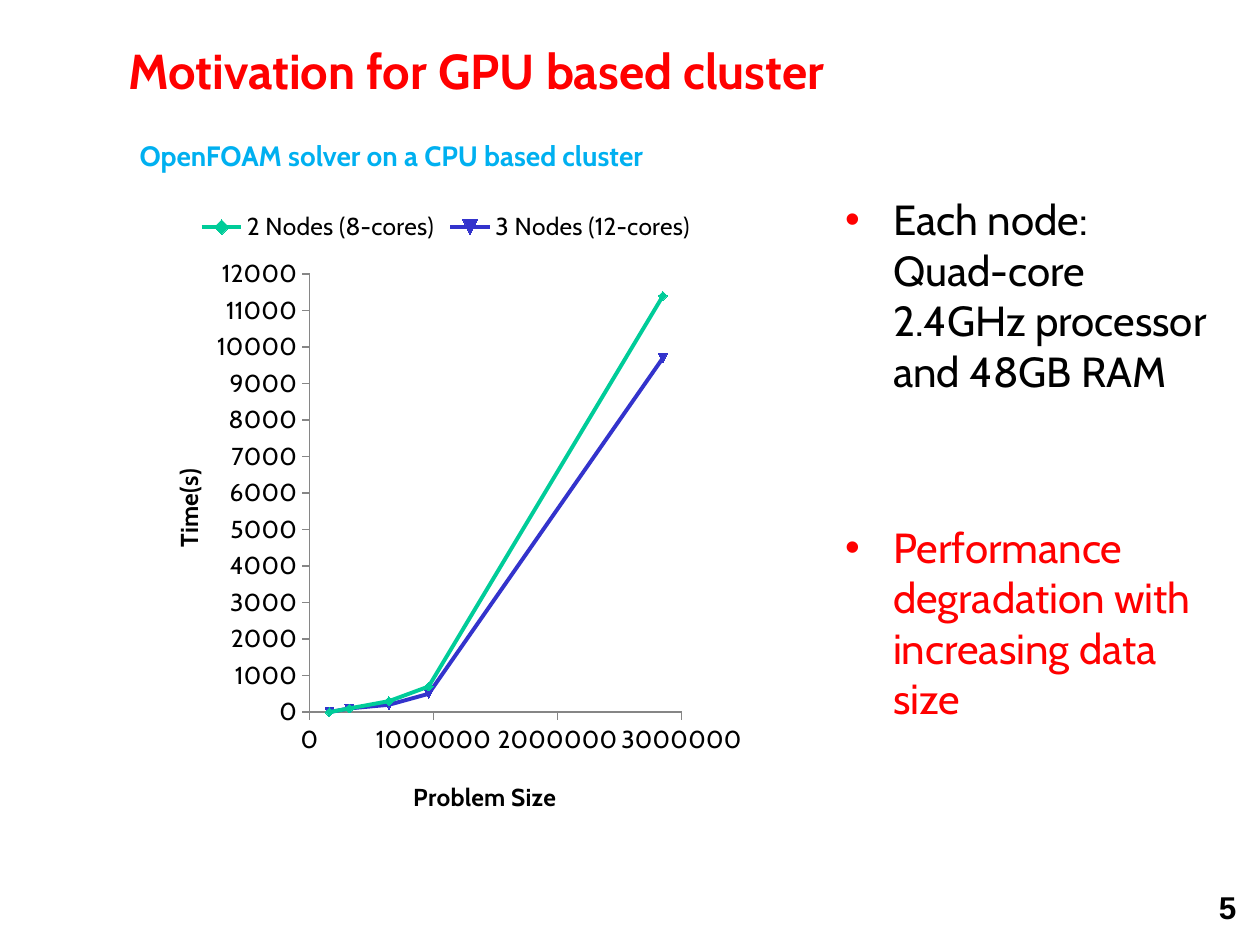
from lxml import etree
from pptx import Presentation
from pptx.chart.data import XyChartData
from pptx.dml.color import RGBColor
from pptx.enum.chart import XL_CHART_TYPE, XL_LEGEND_POSITION, XL_TICK_MARK
from pptx.enum.text import MSO_ANCHOR, PP_ALIGN
from pptx.oxml.ns import qn
from pptx.util import Inches, Pt

SCATTER_LINES = XL_CHART_TYPE.XY_SCATTER_LINES
LEGEND_TOP = XL_LEGEND_POSITION.TOP
TICK_OUTSIDE, TICK_NONE = XL_TICK_MARK.OUTSIDE, XL_TICK_MARK.NONE
MIDDLE, TOP = MSO_ANCHOR.MIDDLE, MSO_ANCHOR.TOP
LEFT, RIGHT = PP_ALIGN.LEFT, PP_ALIGN.RIGHT

FONT = "Cabin"
RED, BLACK, SKY, GREY = "FF0000", "000000", "00B0F0", "868686"

PROBLEM_SIZES = [160000, 320000, 640000, 960000, 2850000]
SOLVER_TIMES = [
    ("2 Nodes (8-cores)", "00CC99", [0, 100, 300, 700, 11400]),
    ("3 Nodes (12-cores)", "3333CC", [0, 100, 200, 500, 9700]),
]
BULLETS = [
    ("Each node: Quad-core 2.4GHz processor and 48GB RAM", BLACK),
    ("Performance degradation with increasing data size", RED),
]


def rgb(color):
    return RGBColor.from_string(color)


def set_font(font, size, color, bold=False, name=FONT):
    font.name, font.size, font.bold = name, Pt(size), bold
    font.color.rgb = rgb(color)


def add_run(paragraph, text, size, color, bold=False, name=FONT):
    run = paragraph.add_run()
    run.text = text
    set_font(run.font, size, color, bold, name)


def place(shape, box):
    shape.left, shape.top, shape.width, shape.height = map(Inches, box)


def fill_title(slide, box):
    title = slide.shapes.title
    place(title, box)
    title.text_frame.vertical_anchor = MIDDLE
    paragraph = title.text_frame.paragraphs[0]
    paragraph.alignment = LEFT
    add_run(paragraph, "Motivation for GPU based cluster", 28, RED, bold=True)


def add_frame(slide, box):
    frame = slide.shapes.add_textbox(*map(Inches, box)).text_frame
    frame.word_wrap = True
    frame.vertical_anchor = TOP
    return frame


def add_line(slide, box, text, size, color, name=FONT, align=LEFT):
    paragraph = add_frame(slide, box).paragraphs[0]
    paragraph.alignment = align
    add_run(paragraph, text, size, color, bold=True, name=name)


def set_bullet(paragraph, color):
    properties = paragraph._p.get_or_add_pPr()
    indent = Inches(0.38)
    properties.set("marL", str(indent))
    properties.set("indent", str(-indent))
    bullet_color = etree.SubElement(properties, qn("a:buClr"))
    etree.SubElement(bullet_color, qn("a:srgbClr"), val=color)
    etree.SubElement(properties, qn("a:buFont"), typeface="Arial")
    etree.SubElement(properties, qn("a:buChar"), char="•")


def add_bullets(slide, box):
    frame = add_frame(slide, box)
    for index, (text, color) in enumerate(BULLETS):
        paragraph = frame.add_paragraph() if index else frame.paragraphs[0]
        if index:
            paragraph.space_before = Pt(72)
        set_bullet(paragraph, RED)
        add_run(paragraph, text, 24, color)


def manual_layout(**values):
    """Layout element whose values are fractions of the chart's size."""
    layout = etree.Element(qn("c:layout"))
    manual = etree.SubElement(layout, qn("c:manualLayout"))
    if "w" in values:
        etree.SubElement(manual, qn("c:layoutTarget"), val="inner")
    for key in ("x", "y"):
        etree.SubElement(manual, qn(f"c:{key}Mode"), val="edge")
    for key, value in values.items():
        etree.SubElement(manual, qn(f"c:{key}"), val=str(value))
    return layout


def drop_layout(element):
    for layout in element.findall(qn("c:layout")):
        element.remove(layout)


def format_axis(axis, title, maximum, step, title_x, title_y):
    axis.minimum_scale, axis.maximum_scale, axis.major_unit = 0, maximum, step
    axis.has_major_gridlines = False
    axis.major_tick_mark, axis.minor_tick_mark = TICK_OUTSIDE, TICK_NONE
    axis.format.line.color.rgb = rgb(GREY)
    axis.tick_labels.number_format = "General"
    axis.tick_labels.number_format_is_linked = False
    set_font(axis.tick_labels.font, 14, BLACK)
    axis_title = axis.axis_title
    add_run(axis_title.text_frame.paragraphs[0], title, 14, BLACK, bold=True)
    element = axis_title._element
    drop_layout(element)
    element.find(qn("c:tx")).addnext(manual_layout(x=title_x, y=title_y))


def add_solver_chart(slide, box):
    data = XyChartData()
    for name, _, times in SOLVER_TIMES:
        series = data.add_series(name)
        for size, time in zip(PROBLEM_SIZES, times):
            series.add_data_point(size, time)
    chart = slide.shapes.add_chart(SCATTER_LINES, *map(Inches, box), data).chart
    chart.has_title = False
    set_font(chart.font, 10, BLACK)

    chart.has_legend = True
    chart.legend.position = LEGEND_TOP
    chart.legend.include_in_layout = False
    set_font(chart.legend.font, 14, BLACK)

    format_axis(chart.category_axis, "Problem Size", 3000000, 1000000, 0.44, 0.91)
    format_axis(chart.value_axis, "Time(s)", 12000, 1000, 0.05, 0.42)

    plot = chart.plots[0]
    plot.vary_by_categories = False
    for number, (series, (_, color, _)) in enumerate(zip(plot.series, SOLVER_TIMES), 1):
        series.smooth = False
        series.format.line.color.rgb = rgb(color)
        series.format.line.width = Pt(2.25)
        # Automatic markers follow the index: 1 is a diamond, 2 a triangle
        series._element.find(qn("c:idx")).set("val", str(number))

    plot_area = chart._chartSpace.find(f".//{qn('c:plotArea')}")
    drop_layout(plot_area)
    plot_area.insert(0, manual_layout(x=0.28, y=0.12, w=0.6, h=0.69))


def main():
    prs = Presentation()
    prs.slide_width, prs.slide_height = Inches(10), Inches(7.5)
    slide = prs.slides.add_slide(prs.slide_layouts[5])
    fill_title(slide, (0.92, 0.22, 8, 0.67))
    add_line(slide, (7.83, 7, 2.08, 0.33), "5", 18, BLACK, name="Arial", align=RIGHT)
    add_bullets(slide, (6.61, 1.49, 3.09, 4.62))
    add_line(slide, (1.01, 1.05, 5.55, 0.37),
             "OpenFOAM solver on a CPU based cluster", 16, SKY)
    add_solver_chart(slide, (1.08, 1.57, 4.92, 5.04))
    prs.save("out.pptx")


if __name__ == "__main__":
    main()
